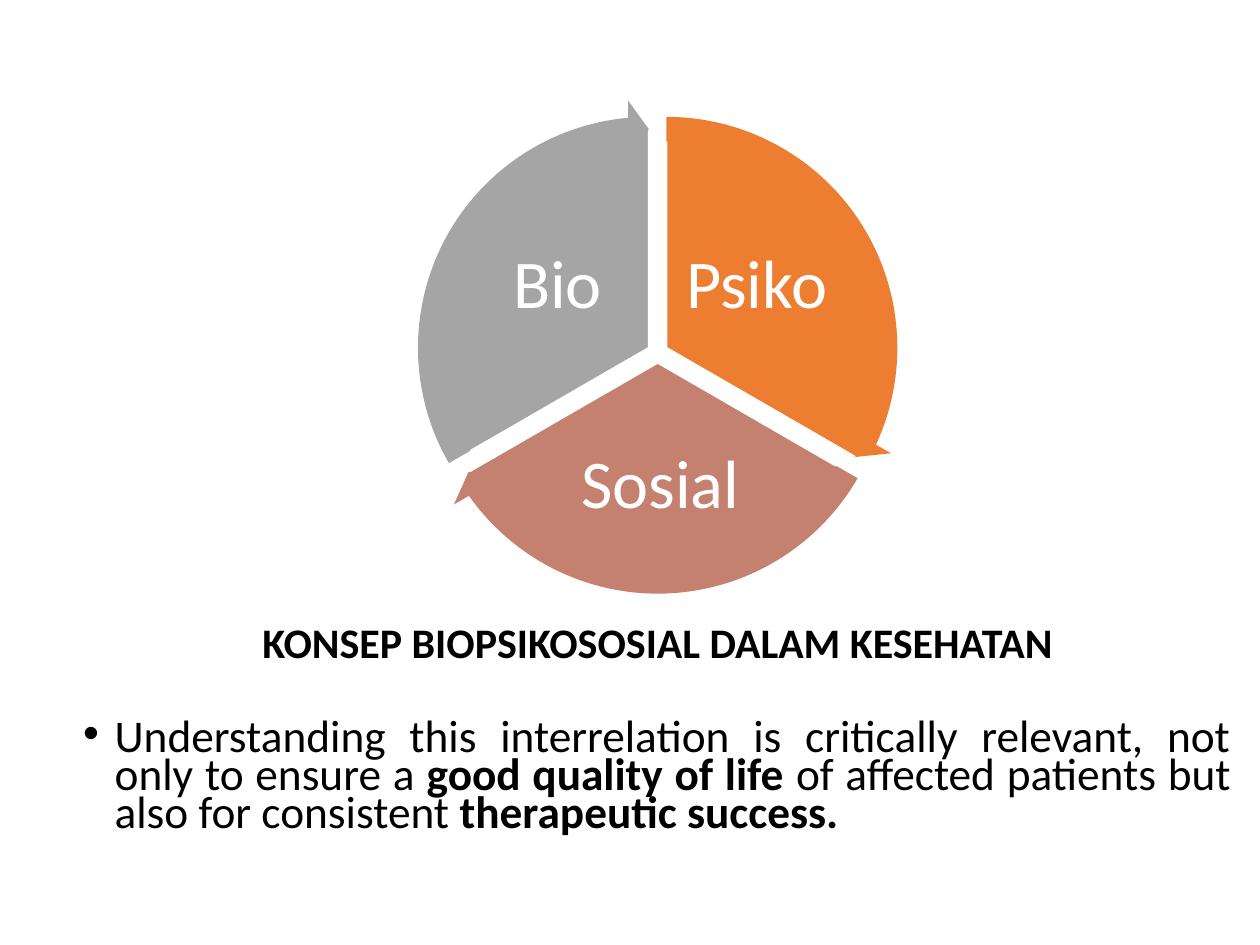
from dataclasses import dataclass

from pptx import Presentation
from pptx.dml.color import RGBColor
from pptx.enum.shapes import MSO_SHAPE as Shape
from pptx.enum.text import MSO_ANCHOR as Anchor, MSO_AUTO_SIZE as AutoSize, PP_ALIGN as Align
from pptx.util import Inches, Pt

ORANGE = RGBColor(0xED, 0x7D, 0x31)
CLAY = RGBColor(0xC4, 0x81, 0x70)
GRAY = RGBColor(0xA5, 0xA5, 0xA5)
WHITE = RGBColor(0xFF, 0xFF, 0xFF)
BLACK = RGBColor(0, 0, 0)

PIE_SIZE = 3.51
ARROW_SIZE = 3.94


@dataclass
class Sector:
    """A cycle sector; shift is from the ring box, label_box from the sector's hub."""
    label: str
    color: RGBColor
    start: float
    end: float
    arrow_start: float
    arrow_end: float
    shift: tuple
    label_box: tuple


SECTORS = [
    Sector("Psiko", ORANGE, 162, 18, 14.72, 161.99, (0.14, 0), (0.09, -1.01, 1.25, 1.04)),
    Sector("Sosial", CLAY, 18, 90, 86.72, 18, (0.07, 0.12), (-0.92, 0.52, 1.88, 0.92)),
    Sector("Bio", GRAY, 90, 162, 158.73, 90, (0, 0), (-1.35, -1.01, 1.25, 1.04)),
]


def write(frame, *runs, size, color=BLACK, align=Align.CENTER, anchor=Anchor.TOP,
          line_spacing=1.0, space_before=0, inset=None):
    """Fill a text frame with one paragraph of (text, bold) runs and return it."""
    frame.word_wrap = True
    frame.auto_size = AutoSize.NONE
    frame.vertical_anchor = anchor
    if inset is not None:
        frame.margin_left = frame.margin_right = Inches(inset)
        frame.margin_top = frame.margin_bottom = Inches(inset)
    paragraph = frame.paragraphs[0]
    paragraph.alignment = align
    paragraph.line_spacing = line_spacing
    paragraph.space_before = Pt(space_before)
    for text, bold in runs:
        run = paragraph.add_run()
        run.text = text
        run.font.name = "Calibri"
        run.font.size = Pt(size)
        run.font.bold = bold
        run.font.color.rgb = color
    return paragraph


def place(part, left, top, width, height):
    """Move a placeholder to the given box."""
    part.left, part.top = Inches(left), Inches(top)
    part.width, part.height = Inches(width), Inches(height)


def add_round(shapes, kind, hub, size, color, adjustments):
    """Add a filled round shape centred on the hub."""
    x, y = hub
    part = shapes.add_shape(kind, Inches(x - size / 2), Inches(y - size / 2),
                            Inches(size), Inches(size))
    for index, value in enumerate(adjustments):
        part.adjustments[index] = value
    part.shadow.inherit = False
    part.fill.solid()
    part.fill.fore_color.rgb = color
    part.line.fill.background()
    return part


def add_cycle(slide, left, top):
    """Draw the three-sector cycle from its top left corner."""
    shapes = slide.shapes.add_group_shape().shapes
    hubs = [(left + ARROW_SIZE / 2 + s.shift[0], top + ARROW_SIZE / 2 + s.shift[1])
            for s in SECTORS]
    for sector, hub in zip(SECTORS, hubs):
        wedge = add_round(shapes, Shape.PIE, hub, PIE_SIZE, sector.color,
                          (sector.start, sector.end))
        wedge.line.color.rgb = WHITE
        wedge.line.width = Pt(1)
        dx, dy, width, height = sector.label_box
        label = shapes.add_textbox(Inches(hub[0] + dx), Inches(hub[1] + dy),
                                   Inches(width), Inches(height))
        write(label.text_frame, (sector.label, False), size=39, color=WHITE,
              anchor=Anchor.MIDDLE, line_spacing=0.9, inset=0.05)
    for sector, hub in zip(SECTORS, hubs):
        add_round(shapes, Shape.CIRCULAR_ARROW, hub, ARROW_SIZE, sector.color,
                  (0.05, 3.28, sector.arrow_start, sector.arrow_end, 0.06))


def add_heading(slide, *box):
    """Set the heading below the cycle."""
    heading = slide.shapes.title
    place(heading, *box)
    write(heading.text_frame, ("KONSEP BIOPSIKOSOSIAL DALAM KESEHATAN", True), size=24)


def add_statement(slide, *box):
    """Set the justified bullet at the foot of the slide."""
    statement = slide.placeholders[1]
    place(statement, *box)
    paragraph = write(
        statement.text_frame,
        ("Understanding this interrelation is critically relevant, not only to ensure a ", False),
        ("good quality of life ", True),
        ("of affected patients but also for consistent ", False),
        ("therapeutic success.", True),
        size=25.9, align=Align.JUSTIFY, line_spacing=0.7, space_before=10)
    properties = paragraph._p.get_or_add_pPr()
    properties.set("marL", str(Inches(0.25)))
    properties.set("indent", str(Inches(-0.25)))


def main():
    """Build and save the slide."""
    deck = Presentation()
    deck.slide_width, deck.slide_height = Inches(10), Inches(7.5)
    slide = deck.slides.add_slide(deck.slide_layouts[1])
    add_statement(slide, 0.56, 5.68, 9.31, 1.14)
    add_cycle(slide, 3.18, 0.79)
    add_heading(slide, 1.96, 4.84, 6.52, 0.5)
    deck.save("out.pptx")


if __name__ == "__main__":
    main()
